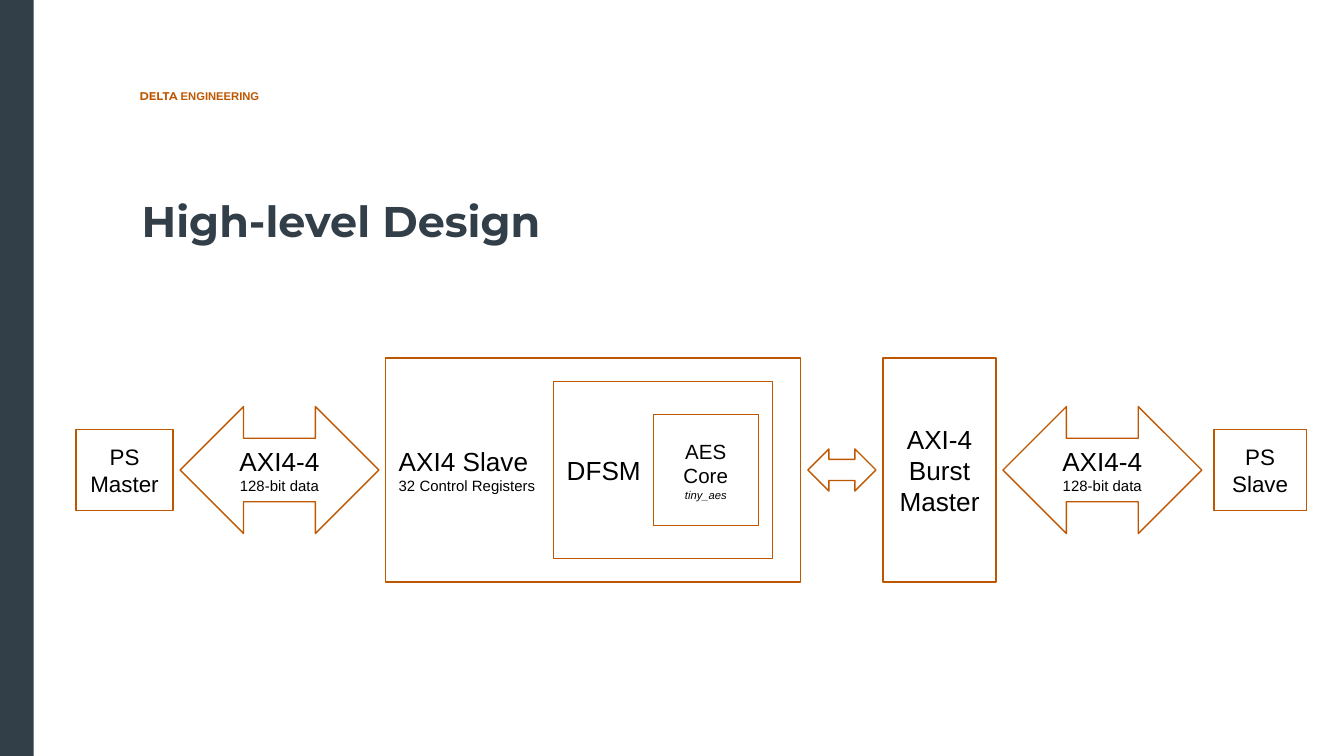
from pptx import Presentation
from pptx.dml.color import RGBColor
from pptx.enum.shapes import MSO_SHAPE
from pptx.enum.text import MSO_ANCHOR, PP_ALIGN
from pptx.util import Pt

ORANGE, SLATE, WHITE, BLACK = "BF5700", "333F48", "FFFFFF", "000000"
RECT, ARROW = MSO_SHAPE.RECTANGLE, MSO_SHAPE.LEFT_RIGHT_ARROW
LEFT, MID = PP_ALIGN.LEFT, PP_ALIGN.CENTER


def paint(target, color):
    target.rgb = RGBColor.from_string(color)


def style(font, size, color, face="Arial", bold=False, italic=False):
    font.name, font.size = face, Pt(size)
    font.bold, font.italic = bold, italic
    paint(font.color, color)


def add_shape(slide, kind, box, fill, line=None):
    shape = slide.shapes.add_shape(kind, *map(Pt, box))
    shape.shadow.inherit = False
    shape.fill.solid()
    paint(shape.fill.fore_color, fill)
    if line:
        paint(shape.line.color, line)
        shape.line.width = Pt(0.75)
    else:
        shape.line.fill.background()
    return shape


def add_block(slide, kind, axis, left, width, height, lines=(), align=MID):
    """Outlined block centred on a horizontal axis; lines are (text, size, italic)."""
    box = left, axis - height / 2, width, height
    frame = add_shape(slide, kind, box, WHITE, ORANGE).text_frame
    frame.word_wrap = True
    frame.vertical_anchor = MSO_ANCHOR.MIDDLE
    frame.margin_left = frame.margin_right = Pt(7.2)
    frame.margin_top = frame.margin_bottom = Pt(7.2)
    for i, (text, size, italic) in enumerate(lines):
        par = frame.add_paragraph() if i else frame.paragraphs[0]
        par.text, par.alignment = text, align
        style(par.font, size, BLACK, italic=italic)


def add_label(slide, box, size, color, runs):
    """Bold text line; runs are (text, face)."""
    frame = slide.shapes.add_textbox(*map(Pt, box)).text_frame
    frame.word_wrap = True
    frame.margin_left = frame.margin_right = Pt(2.88)
    frame.margin_top = frame.margin_bottom = Pt(1.44)
    for text, face in runs:
        run = frame.paragraphs[0].add_run()
        run.text = text
        style(run.font, size, color, face, bold=True)


def add_core(slide, left, axis):
    """Control slave with the state machine and cipher core nested inside."""
    add_block(slide, RECT, axis, left, 222.5, 120,
              [("AXI4 Slave", 14, False), ("32 Control Registers", 8, False)], LEFT)
    add_block(slide, RECT, axis, left + 90, 117.4, 95, [("DFSM", 14, False)], LEFT)
    add_block(slide, RECT, axis, left + 143.5, 56.2, 59.4,
              [("AES Core", 11, False), ("tiny_aes", 6, True)])


def add_flow(slide, left, axis):
    bus = [("AXI4-4", 14, False), ("128-bit data", 8, False)]
    add_block(slide, RECT, axis, left, 52, 43.4, [("PS Master", 12, False)])
    add_block(slide, ARROW, axis, left + 55.7, 106.5, 68, bus)
    add_core(slide, left + 165.7, axis)
    add_block(slide, ARROW, axis, left + 392, 36.5, 22.6)
    add_block(slide, RECT, axis, left + 432.2, 60.7, 120,
              [("AXI-4 Burst Master", 14, False)])
    add_block(slide, ARROW, axis, left + 496.5, 106.5, 68, bus)
    add_block(slide, RECT, axis, left + 609.5, 49.6, 43.4, [("PS Slave", 12, False)])


def main():
    deck = Presentation()
    deck.slide_width, deck.slide_height = Pt(720), Pt(405)
    slide = deck.slides.add_slide(deck.slide_layouts[6])
    add_shape(slide, RECT, (0, 0, 18, 405), SLATE)
    add_label(slide, (72, 46.5, 327, 10), 6, ORANGE,
              [("DELTA", "Montserrat"), (" ENGINEERING", "Arial")])
    add_label(slide, (73, 103, 439, 31), 23, SLATE,
              [("High-level Design", "Montserrat")])
    add_flow(slide, 40.8, 251.8)
    deck.save("out.pptx")


if __name__ == "__main__":
    main()
